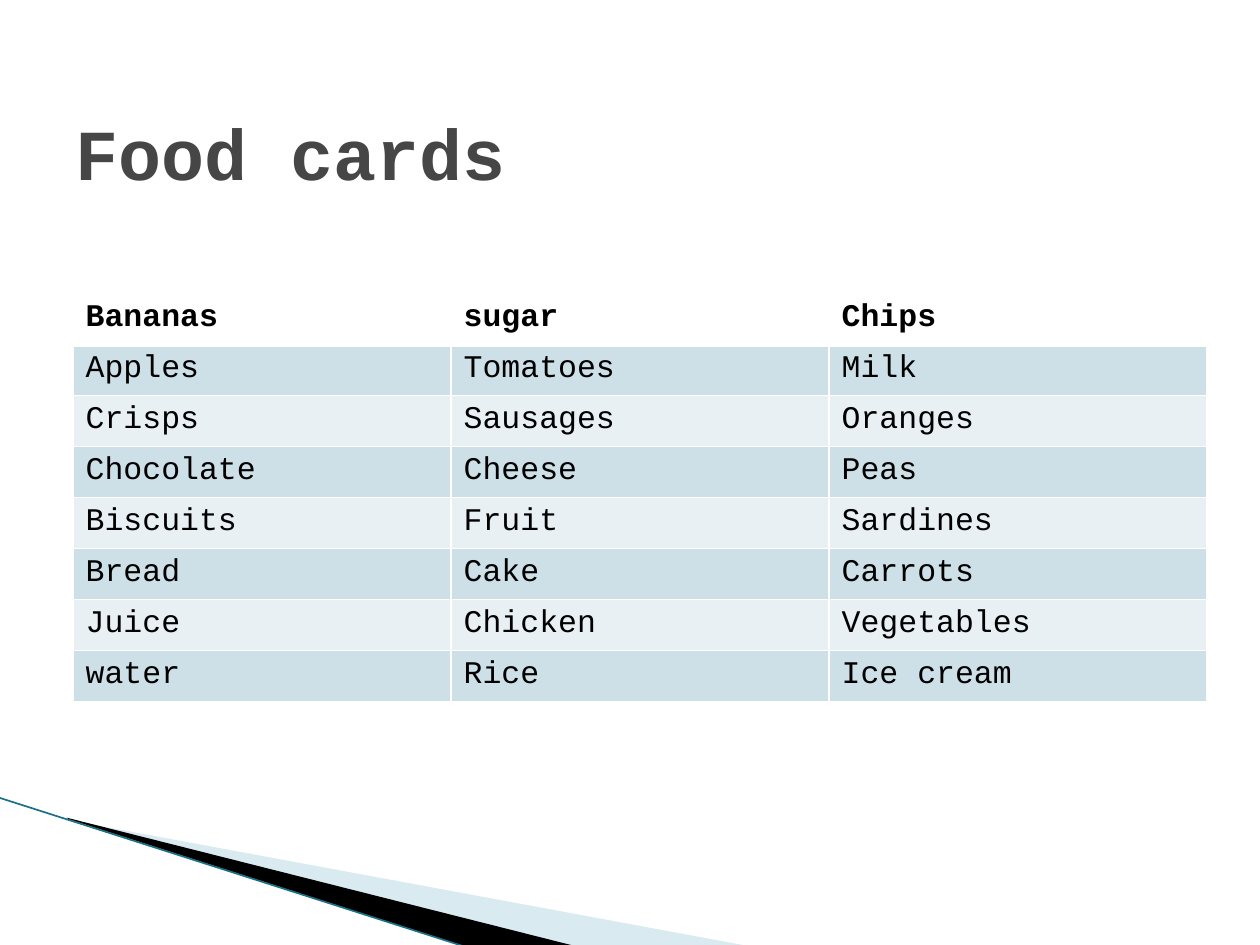
from dataclasses import dataclass

from lxml.etree import SubElement
from pptx import Presentation
from pptx.dml.color import RGBColor as Rgb
from pptx.enum.shapes import MSO_CONNECTOR as Connector
from pptx.enum.text import MSO_ANCHOR as Anchor, PP_ALIGN as Align
from pptx.oxml.ns import qn
from pptx.util import Inches, Pt


@dataclass(frozen=True)
class Theme:
    font: str = "Courier New"
    title_size: float = 41
    cell_size: float = 18
    title: str = "464646"
    ink: str = "000000"
    paper: str = "FFFFFF"
    bands: tuple = ("CDE0E8", "E8F0F4")
    wedge: str = "A0CBDC"
    edge: str = "1A7085"


def write(frame, text, *, font, size, color, bold=False, anchor=Anchor.TOP):
    """Put one left-aligned, formatted paragraph into a text frame."""
    frame.word_wrap = True
    frame.vertical_anchor = anchor
    paragraph = frame.paragraphs[0]
    paragraph.alignment = Align.LEFT
    run = paragraph.add_run()
    run.text = text
    run.font.name = font
    run.font.size = Pt(size)
    run.font.bold = bold
    run.font.color.rgb = Rgb.from_string(color)


def paint(fill, color):
    fill.solid()
    fill.fore_color.rgb = Rgb.from_string(color)


class SlideBuilder:
    def __init__(self, slide, theme):
        self.slide = slide
        self.theme = theme
        paint(slide.background.fill, theme.paper)

    def title(self, text, left, top, width, height):
        heading = self.slide.shapes.title
        heading.left, heading.top = Inches(left), Inches(top)
        heading.width, heading.height = Inches(width), Inches(height)
        write(heading.text_frame, text, font=self.theme.font,
              size=self.theme.title_size, color=self.theme.title,
              bold=True, anchor=Anchor.MIDDLE)

    def wedge(self, points, color, opacity=100):
        corners = [(Inches(x), Inches(y)) for x, y in points]
        outline = self.slide.shapes.build_freeform(*corners[0])
        outline.add_line_segments(corners[1:], close=True)
        wedge = outline.convert_to_shape()
        wedge.shadow.inherit = False
        wedge.line.fill.background()
        paint(wedge.fill, color)
        if opacity < 100:
            tint = wedge.fill._xPr.find(f".//{qn('a:srgbClr')}")
            SubElement(tint, qn("a:alpha"), val=str(opacity * 1000))

    def line(self, start, end, color, width):
        ends = [Inches(value) for value in (*start, *end)]
        edge = self.slide.shapes.add_connector(Connector.STRAIGHT, *ends)
        edge.line.color.rgb = Rgb.from_string(color)
        edge.line.width = Pt(width)
        SubElement(edge._element.spPr, qn("a:effectLst"))

    def table(self, rows, left, top, width, height):
        grid = self.slide.shapes.add_table(
            len(rows), len(rows[0]), Inches(left), Inches(top),
            Inches(width), Inches(height)).table
        for r, row in enumerate(rows):
            header = r == 0
            color = self.theme.paper if header else self.theme.bands[(r - 1) % 2]
            for c, food in enumerate(row):
                cell = grid.cell(r, c)
                write(cell.text_frame, food, font=self.theme.font,
                      size=self.theme.cell_size, color=self.theme.ink, bold=header)
                self.borders(cell, top=3 if r == 1 else 1, bottom=3 if header else 1)
                paint(cell.fill, color)

    def borders(self, cell, top, bottom):
        properties = cell._tc.get_or_add_tcPr()
        for side, width in (("L", 1), ("R", 1), ("T", top), ("B", bottom)):
            border = SubElement(properties, qn(f"a:ln{side}"), w=str(Pt(width)))
            fill = SubElement(border, qn("a:solidFill"))
            SubElement(fill, qn("a:srgbClr"), val=self.theme.paper)


FOODS = [
    ("Bananas", "sugar", "Chips"),
    ("Apples", "Tomatoes", "Milk"),
    ("Crisps", "Sausages", "Oranges"),
    ("Chocolate", "Cheese", "Peas"),
    ("Biscuits", "Fruit", "Sardines"),
    ("Bread", "Cake", "Carrots"),
    ("Juice", "Chicken", "Vegetables"),
    ("water", "Rice", "Ice cream"),
]


def main():
    deck = Presentation()
    deck.slide_width, deck.slide_height = Inches(10), Inches(7.5)
    title_only = deck.slide_layouts[5]
    theme = Theme()
    page = SlideBuilder(deck.slides.add_slide(title_only), theme)

    # Corner decoration
    page.wedge([(0.55, 6.51), (5.95, 7.51), (4.56, 7.51), (0.55, 6.5)],
               theme.wedge, opacity=40)
    page.wedge([(0.53, 6.49), (4.57, 7.51), (3.72, 7.52), (0.54, 6.5)], theme.ink)
    page.line((-0.01, 6.33), (3.71, 7.52), theme.edge, 0.95)

    # Food cards
    page.table(FOODS, 0.58, 2.33, 9, 3.24)
    page.title("Food cards", 0.5, 0.58, 9, 1.25)

    deck.save("out.pptx")


if __name__ == "__main__":
    main()
